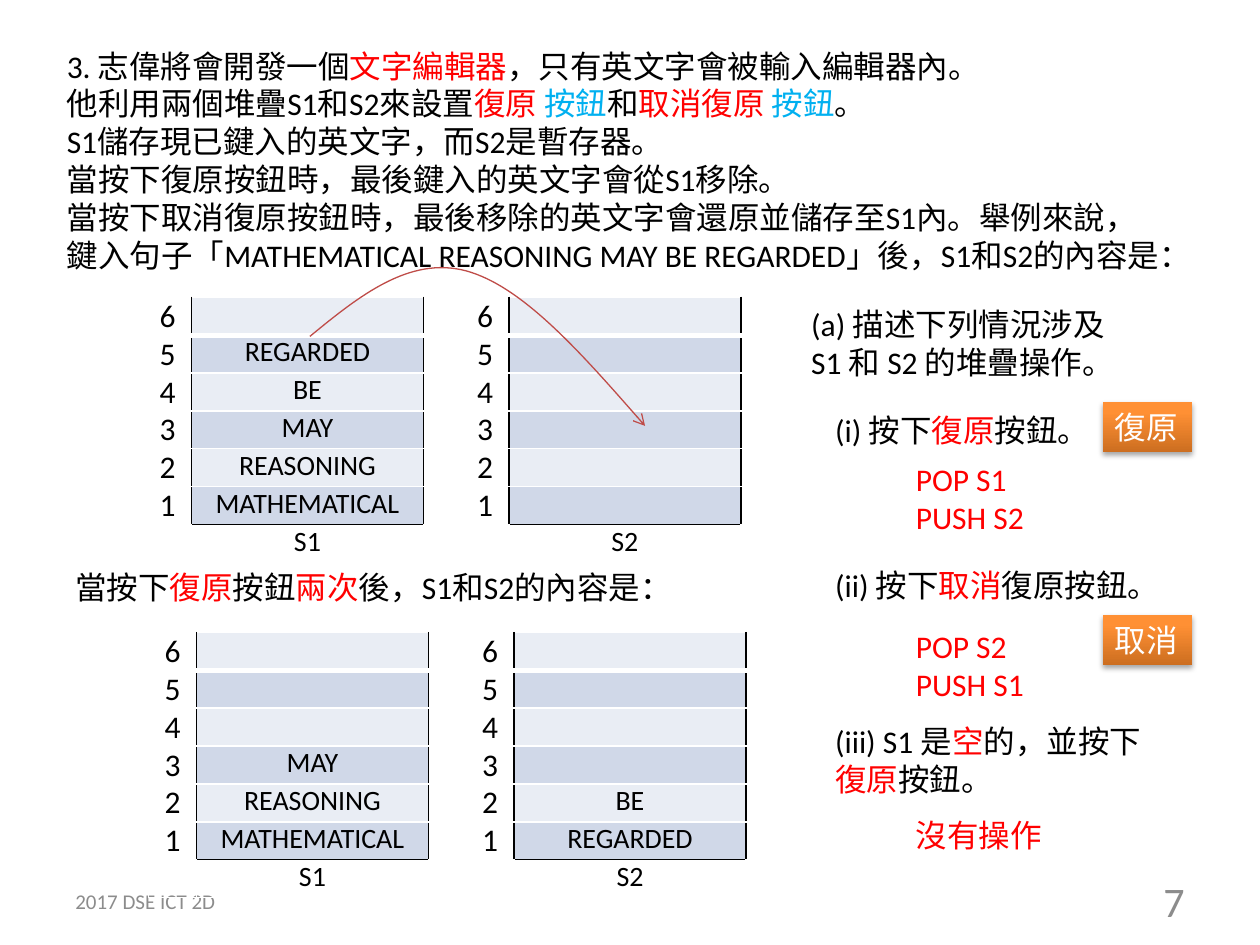
from dataclasses import dataclass
from lxml import etree
from pptx import Presentation
from pptx.dml.color import RGBColor
from pptx.enum import shapes, text
from pptx.oxml import ns
from pptx.util import Inches, Pt


@dataclass(frozen=True)
class Theme:
    latin: str = "Calibri"
    asian: str = "Noto Sans CJK JP"
    black: str = "000000"
    white: str = "FFFFFF"
    red: str = "FF0000"
    blue: str = "00B0F0"
    grey: str = "8C8C8C"
    curve: str = "BF4C48"
    bands: tuple = ("E9EDF4", "D0D8E8")
    glow: tuple = ((0, "CC6E20"), (0.8, "FF9034"))
    body: int = 18
    word: int = 16
    foot: int = 12
    page: int = 24


T = Theme()
FIT = text.MSO_AUTO_SIZE.SHAPE_TO_FIT_TEXT
TOP, MID = text.MSO_ANCHOR.TOP, text.MSO_ANCHOR.MIDDLE
LEFT, MIDDLE, RIGHT = text.PP_ALIGN.LEFT, text.PP_ALIGN.CENTER, text.PP_ALIGN.RIGHT
ROW, LABEL, SLOT = 0.3, 0.38, 1.84

QUESTION = [
    ["3. 志偉將會開發一個", ("文字編輯器", T.red), "，只有英文字會被輸入編輯器內。"],
    ["他利用兩個堆疊S1和S2來設置", ("復原 ", T.red), ("按鈕", T.blue), "和",
     ("取消復原 ", T.red), ("按鈕", T.blue), "。"],
    ["S1儲存現已鍵入的英文字，而S2是暫存器。"],
    ["當按下復原按鈕時，最後鍵入的英文字會從S1移除。"],
    ["當按下取消復原按鈕時，最後移除的英文字會還原並儲存至S1內。舉例來說，"],
    ["鍵入句子「MATHEMATICAL REASONING MAY BE REGARDED」後，S1和S2的內容是："],
]
AFTER = [["當按下", ("復原", T.red), "按鈕", ("兩次", T.red), "後，S1和S2的內容是："]]
TASK = [["(a) 描述下列情況涉及 S1 和 S2 的堆疊操作。"]]
PARTS = [
    (3.21, 2.24, 0.4, False, [["(i) 按下", ("復原", T.red), "按鈕。"]]),
    (4.44, 2.8, 0.4, False, [["(ii) 按下", ("取消", T.red), "復原按鈕。"]]),
    (5.68, 2.8, 0.71, True,
     [["(iii) S1 是", ("空", T.red), "的，並按下", ("復原", T.red), "按鈕。"]]),
]
ANSWERS = [
    (3.6, 0.71, ["POP S1", "PUSH S2"]),
    (4.93, 0.71, ["POP S2", "PUSH S1"]),
    (6.43, 0.4, ["沒有操作"]),
]
WORDS = ["MATHEMATICAL", "REASONING", "MAY", "BE", "REGARDED"]
STACKS = [  # left, top, name, words from the bottom up
    (1.14, 2.36, "S1", WORDS),
    (3.66, 2.36, "S2", []),
    (1.18, 5.02, "S1", WORDS[:3]),
    (3.7, 5.02, "S2", WORDS[:2:-1]),
]


def apply(item, **vals):
    for key, val in vals.items():
        setattr(item, key, val)


def box(*vals):
    return [Inches(v) for v in vals]


def add(parent, tag, **attrs):
    return etree.SubElement(parent, ns.qn(tag), {k: str(v) for k, v in attrs.items()})


def write(frame, paras, size=T.body, color=T.black, align=LEFT):
    """Fill a frame; a run is a string, or a pair of string and colour."""
    for i, runs in enumerate(paras):
        para = frame.paragraphs[0] if i == 0 else frame.add_paragraph()
        para.alignment = align
        for part in runs:
            words, hue = (part, color) if isinstance(part, str) else part
            run = para.add_run()
            run.text = words
            apply(run.font, name=T.latin, size=Pt(size))
            run.font.color.rgb = RGBColor.from_string(hue)
            add(run.font._element, "a:ea", typeface=T.asian)


def label(slide, at, paras, wrap=True, anchor=TOP, fit=FIT, **style):
    frame = slide.shapes.add_textbox(*box(*at)).text_frame
    apply(frame, word_wrap=wrap, auto_size=fit, vertical_anchor=anchor)
    write(frame, paras, **style)


def heading(slide):
    title = slide.shapes.title
    left, top, width, height = box(0.43, 0.32, 9.3, 1.92)
    apply(title, left=left, top=top, width=width, height=height)
    apply(title.text_frame, word_wrap=True, auto_size=FIT, vertical_anchor=TOP)
    write(title.text_frame, QUESTION)


def edge(cell, **sides):
    """Draw the borders L, R, T and B, each a pair of colour and points."""
    props = cell._tc.get_or_add_tcPr()
    for side in "LRTB":
        color, width = sides.get(side, (T.white, 1))
        line = add(props, "a:ln" + side, w=Pt(width))
        add(add(line, "a:solidFill"), "a:srgbClr", val=color)


def fill(cell, words, size, color=None):
    apply(cell, margin_left=Inches(0.07), margin_right=Inches(0.07),
          margin_top=0, margin_bottom=0)
    write(cell.text_frame, [[words]], size=size, align=MIDDLE)
    if color:
        cell.fill.solid()
        cell.fill.fore_color.rgb = RGBColor.from_string(color)
    else:
        cell.fill.background()


def stack(slide, left, top, name, words, slots=6):
    at = box(left, top, LABEL + SLOT, ROW * (slots + 1))
    grid = slide.shapes.add_table(slots + 1, 2, *at).table
    apply(grid, first_row=False, horz_banding=False)
    for col, width in zip(grid.columns, (LABEL, SLOT)):
        col.width = Inches(width)
    wall, thick = (T.black, 1), (T.white, 3)
    for i, row in enumerate(grid.rows):
        row.height = Inches(ROW)
        mark, slot = row.cells
        level = slots - i
        sides = {}
        if i == 0:
            sides["B"] = thick
        if i == 1:
            sides["T"] = thick
        if level:
            edge(mark, **sides, R=wall)
            if level == 1:
                sides["B"] = wall
            edge(slot, **sides, L=wall, R=wall)
            fill(mark, str(level), T.body)
            word = words[level - 1] if level <= len(words) else ""
            fill(slot, word, T.word, T.bands[i % 2])
        else:
            edge(mark)
            edge(slot, T=wall)
            fill(mark, "", T.word)
            fill(slot, name, T.word)


def curve(slide, start, *points):
    """Draw an arrow of cubic curves, three points to each."""
    pen = slide.shapes.build_freeform(*box(*start), scale=1.0)
    pen.add_line_segments([box(*p) for p in points], close=False)
    shape = pen.convert_to_shape()
    shape.shadow.inherit = False
    shape.fill.background()
    shape.line.width = Pt(0.75)
    shape.line.color.rgb = RGBColor.from_string(T.curve)
    add(shape.line._get_or_add_ln(), "a:tailEnd", type="arrow")
    route = next(shape._element.iter(ns.qn("a:path")))
    steps = route.findall(ns.qn("a:lnTo"))
    for i in range(0, len(steps), 3):
        bend = add(route, "a:cubicBezTo")
        for step in steps[i:i + 3]:
            bend.append(step[0])
            route.remove(step)


def button(slide, top, words):
    shape = slide.shapes.add_shape(shapes.MSO_SHAPE.RECTANGLE, *box(8.75, top, 0.71, 0.4))
    shape.line.fill.background()
    shape.fill.gradient()
    shape.fill.gradient_angle = 90
    for stop, (place, color) in zip(shape.fill.gradient_stops, T.glow):
        stop.position = place
        stop.color.rgb = RGBColor.from_string(color)
    shape.shadow.inherit = False
    effects = shape._element.spPr.find(ns.qn("a:effectLst"))
    cast = add(effects, "a:outerShdw", blurRad=Pt(3.1), dist=Pt(1.8),
               dir=90 * 60000, rotWithShape=0)
    add(add(cast, "a:srgbClr", val=T.black), "a:alpha", val=35000)
    apply(shape.text_frame, word_wrap=False, auto_size=FIT, vertical_anchor=MID)
    write(shape.text_frame, [[words]], color=T.white)


def main():
    deck = Presentation()
    apply(deck, slide_width=Inches(10), slide_height=Inches(7.5))
    slide = deck.slides.add_slide(deck.slide_layouts[5])
    heading(slide)
    foot = dict(anchor=MID, fit=None, color=T.grey)
    label(slide, (0.5, 6.95, 2.33, 0.4), [["2017 DSE ICT 2D"]], size=T.foot, **foot)
    label(slide, (7.17, 6.95, 2.33, 0.4), [["7"]], size=T.page, align=RIGHT, **foot)
    for item in STACKS:
        stack(slide, *item)
    label(slide, (0.5, 4.46, 4.98, 0.4), AFTER, wrap=False)
    label(slide, (6.34, 2.37, 2.76, 0.71), TASK)
    for top, width, height, wrap, paras in PARTS:
        label(slide, (6.53, top, width, height), paras, wrap=wrap)
    for top, height, lines in ANSWERS:
        label(slide, (7.17, top, 1.33, height), [[s] for s in lines], color=T.red)
    curve(slide, (2.46, 2.67), (2.85, 2.35), (3.25, 2.03), (3.7, 2.15),
          (4.14, 2.27), (4.63, 2.82), (5.12, 3.38))
    button(slide, 3.19, "復原")
    button(slide, 4.88, "取消")
    deck.save("out.pptx")


if __name__ == "__main__":
    main()
